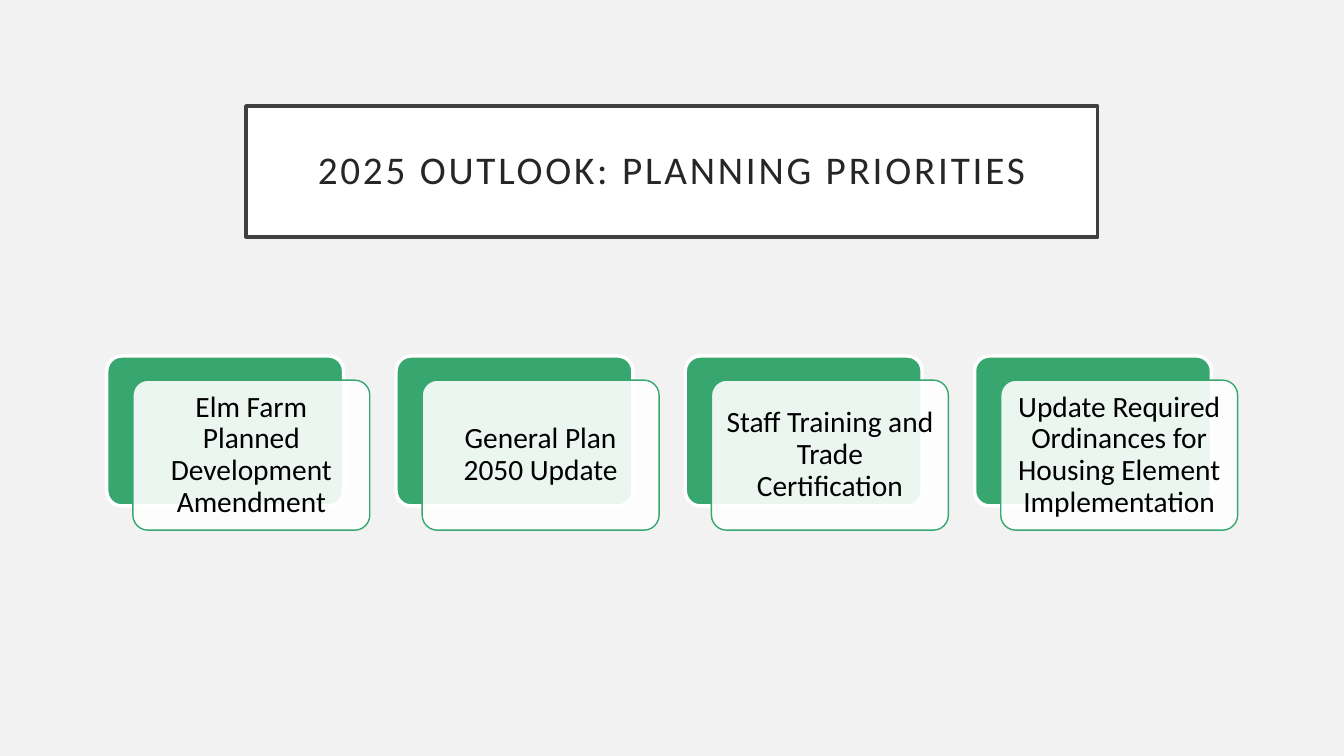
from pptx import Presentation
from pptx.dml.color import RGBColor
from pptx.enum.shapes import MSO_SHAPE
from pptx.enum.text import MSO_ANCHOR, MSO_AUTO_SIZE, PP_ALIGN
from pptx.oxml.ns import qn
from pptx.util import Cm, Pt
from lxml import etree

ROUNDED = MSO_SHAPE.ROUNDED_RECTANGLE
MIDDLE = MSO_ANCHOR.MIDDLE
CENTER = PP_ALIGN.CENTER
NO_AUTOFIT = MSO_AUTO_SIZE.NONE

TITLE = "2025 OUTLOOK: PLANNING PRIORITIES"
PRIORITIES = [
    "Elm Farm Planned Development Amendment",
    "General Plan 2050 Update",
    "Staff Training and Trade Certification",
    "Update Required Ordinances for Housing Element Implementation",
]
COLORS = {
    "background": "F2F2F2",
    "white": "FFFFFF",
    "border": "404040",
    "title": "262626",
    "green": "37A76F",
    "text": "000000",
}
FONT = "Calibri"

# Lengths in centimetres
CARD_LEFT, CARD_TOP, CARD_PITCH = 2.69, 8.97, 7.29
CARD_WIDTH, CARD_HEIGHT = 5.97, 3.78
FRONT_RIGHT, FRONT_DOWN = 0.66, 0.61


def color(name):
    return RGBColor.from_string(COLORS[name])


def paint(shape, fill, line, line_width):
    shape.fill.solid()
    shape.fill.fore_color.rgb = color(fill)
    shape.line.color.rgb = color(line)
    shape.line.width = Pt(line_width)


def write(shape, text, size, text_color, inset):
    """Fill the shape with one centred paragraph and return its run."""
    frame = shape.text_frame
    frame.text = text
    frame.word_wrap = True
    frame.auto_size = NO_AUTOFIT
    frame.vertical_anchor = MIDDLE
    frame.margin_left = frame.margin_right = Cm(inset)
    frame.margin_top = frame.margin_bottom = Cm(inset)
    para = frame.paragraphs[0]
    para.alignment = CENTER
    para.line_spacing = 0.9
    span = para.runs[0]
    span.font.name = FONT
    span.font.size = Pt(size)
    span.font.color.rgb = color(text_color)
    return span


def add_card(slide, left, top, fill, line, line_width):
    card = slide.shapes.add_shape(
        ROUNDED, Cm(left), Cm(top), Cm(CARD_WIDTH), Cm(CARD_HEIGHT))
    card.adjustments[0] = 0.1
    card.shadow.inherit = False
    paint(card, fill, line, line_width)
    return card


def set_opacity(shape, percent):
    fill_color = shape.fill._xPr.find(qn("a:solidFill"))[0]
    etree.SubElement(fill_color, qn("a:alpha"), val=str(percent * 1000))


def main():
    deck = Presentation()
    deck.slide_width, deck.slide_height = Cm(33.87), Cm(19.05)
    slide = deck.slides.add_slide(deck.slide_layouts[5])
    slide.background.fill.solid()
    slide.background.fill.fore_color.rgb = color("background")

    title = slide.shapes.title
    title.left, title.top = Cm(6.2), Cm(2.67)
    title.width, title.height = Cm(21.46), Cm(3.3)
    paint(title, "white", "border", 2.5)
    span = write(title, TITLE, 28, "title", 0.5)
    span.font._element.set("spc", "200")

    for index, priority in enumerate(PRIORITIES):
        left = CARD_LEFT + index * CARD_PITCH
        add_card(slide, left, CARD_TOP, "green", "white", 2.5)
        front = add_card(slide, left + FRONT_RIGHT, CARD_TOP + FRONT_DOWN,
                         "white", "green", 1)
        set_opacity(front, 90)
        write(front, priority, 21, "text", 0.22)

    deck.save("out.pptx")


if __name__ == "__main__":
    main()
